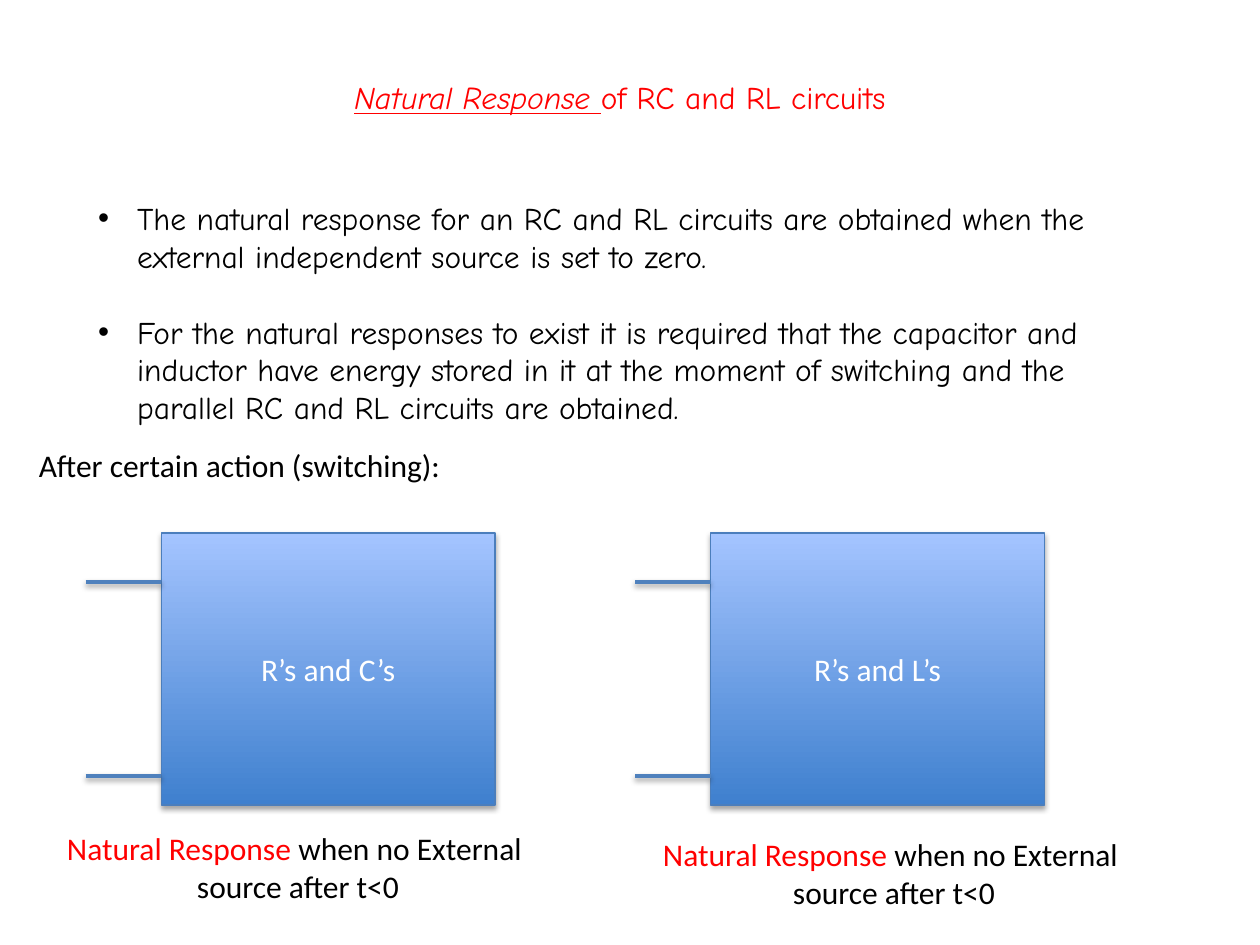
from dataclasses import dataclass

from lxml import etree
from pptx import Presentation
from pptx.dml.color import RGBColor
from pptx.enum.shapes import MSO_CONNECTOR as Connector, MSO_SHAPE as Shape
from pptx.enum.text import MSO_ANCHOR as Anchor, MSO_AUTO_SIZE as AutoSize, PP_ALIGN as Align
from pptx.oxml.ns import qn
from pptx.util import Inches, Pt


@dataclass(frozen=True)
class Theme:
    heading_font: str = "Comic Neue"
    body_font: str = "Calibri"
    size: float = 18
    black: str = "000000"
    red: str = "FF0000"
    white: str = "FFFFFF"
    gradient: tuple[str, str] = ("3F80CE", "A4C4FF")
    box_line: str = "4B7EBC"
    wire: str = "4F81BD"


@dataclass(frozen=True)
class Span:
    text: str
    color: str
    emphasis: bool = False


@dataclass(frozen=True)
class Circuit:
    label: str
    left: float
    caption_left: float
    caption_top: float


THEME = Theme()
CIRCUITS = (
    Circuit("R’s and C’s", 0.68, 0.41, 6.53),
    Circuit("R’s and L’s", 5.04, 5.14, 6.58),
)
BOX_TOP, BOX_WIDTH, BOX_HEIGHT = 4.23, 2.65, 2.16
WIRE_LENGTH, WIRE_TOPS = 0.6, (4.62, 6.16)
BULLETS = (
    "The natural response for an RC and RL circuits are obtained when the "
    "external independent source is set to zero.",
    "For the natural responses to exist it is required that the capacitor and "
    "inductor have energy stored in it at the moment of switching and the "
    "parallel RC and RL circuits are obtained.",
)
CAPTION = (
    (Span("Natural Response ", THEME.red), Span("when no External ", THEME.black)),
    (Span("source after t<0", THEME.black),),
)


def add_spans(paragraph, spans: tuple[Span, ...], font: str) -> None:
    for span in spans:
        run = paragraph.add_run()
        run.text = span.text
        run.font.name = font
        run.font.size = Pt(THEME.size)
        run.font.color.rgb = RGBColor.from_string(span.color)
        if span.emphasis:
            run.font.italic = run.font.underline = True


def add_text(slide, left: float, top: float, width: float, height: float,
             lines: tuple[tuple[Span, ...], ...], font: str,
             align: Align = Align.LEFT, wrap: bool = False):
    box = slide.shapes.add_textbox(Inches(left), Inches(top), Inches(width), Inches(height))
    frame = box.text_frame
    frame.word_wrap = wrap
    frame.auto_size = AutoSize.SHAPE_TO_FIT_TEXT
    for index, spans in enumerate(lines):
        paragraph = frame.add_paragraph() if index else frame.paragraphs[0]
        paragraph.alignment = align
        add_spans(paragraph, spans, font)
    return frame


def add_bullet(paragraph) -> None:
    properties = paragraph._p.get_or_add_pPr()
    properties.set("marL", str(Inches(0.31)))
    properties.set("indent", str(-Inches(0.31)))
    etree.SubElement(properties, qn("a:buFont"), typeface="Arial")
    etree.SubElement(properties, qn("a:buChar"), char="•")


def add_shadow(shape, opacity: int, distance: float) -> None:
    effects = etree.SubElement(shape._element.spPr, qn("a:effectLst"))
    shadow = etree.SubElement(effects, qn("a:outerShdw"), blurRad=str(Pt(3.1)),
                              dist=str(Pt(distance)), dir="5400000", rotWithShape="0")
    color = etree.SubElement(shadow, qn("a:srgbClr"), val=THEME.black)
    etree.SubElement(color, qn("a:alpha"), val=str(opacity * 1000))


def add_circuit(slide, circuit: Circuit) -> None:
    group = slide.shapes.add_group_shape()
    box_left = circuit.left + WIRE_LENGTH

    # Box with its label
    box = group.shapes.add_shape(Shape.RECTANGLE, Inches(box_left), Inches(BOX_TOP),
                                 Inches(BOX_WIDTH), Inches(BOX_HEIGHT))
    box.fill.gradient()
    box.fill.gradient_angle = 90
    for stop, color in zip(box.fill.gradient_stops, THEME.gradient):
        stop.color.rgb = RGBColor.from_string(color)
    box.line.color.rgb = RGBColor.from_string(THEME.box_line)
    box.line.width = Pt(0.75)
    add_shadow(box, 35, 1.8)
    box.text_frame.vertical_anchor = Anchor.MIDDLE
    paragraph = box.text_frame.paragraphs[0]
    paragraph.alignment = Align.CENTER
    add_spans(paragraph, (Span(circuit.label, THEME.white),), THEME.body_font)

    # Terminal wires
    for top in WIRE_TOPS:
        wire = group.shapes.add_connector(Connector.STRAIGHT, Inches(circuit.left), Inches(top),
                                          Inches(box_left), Inches(top))
        wire.line.color.rgb = RGBColor.from_string(THEME.wire)
        wire.line.width = Pt(2)
        add_shadow(wire, 38, 1.6)

    # Caption
    add_text(slide, circuit.caption_left, circuit.caption_top, 3.91, 0.71,
             CAPTION, THEME.body_font, Align.CENTER)


def main() -> None:
    presentation = Presentation()
    presentation.slide_width, presentation.slide_height = Inches(10), Inches(7.5)
    slide = presentation.slides.add_slide(presentation.slide_layouts[6])

    # Title
    title = (Span("Natural Response ", THEME.red, emphasis=True),
             Span("of RC and RL circuits", THEME.red))
    add_text(slide, 2.57, 0.57, 4.7, 0.4, (title,), THEME.heading_font, Align.CENTER)

    # Bullets, one line apart
    lines = tuple((Span(text, THEME.black),) for text in BULLETS)
    frame = add_text(slide, 0.68, 1.53, 8.47, 1.92, lines, THEME.heading_font, wrap=True)
    for paragraph in frame.paragraphs:
        add_bullet(paragraph)
    frame.paragraphs[1].space_before = Pt(21.7)

    # Circuits after switching
    add_text(slide, 0.21, 3.49, 3.43, 0.4,
             ((Span("After certain action (switching):", THEME.black),),), THEME.body_font)
    for circuit in CIRCUITS:
        add_circuit(slide, circuit)

    presentation.save("out.pptx")


if __name__ == "__main__":
    main()
